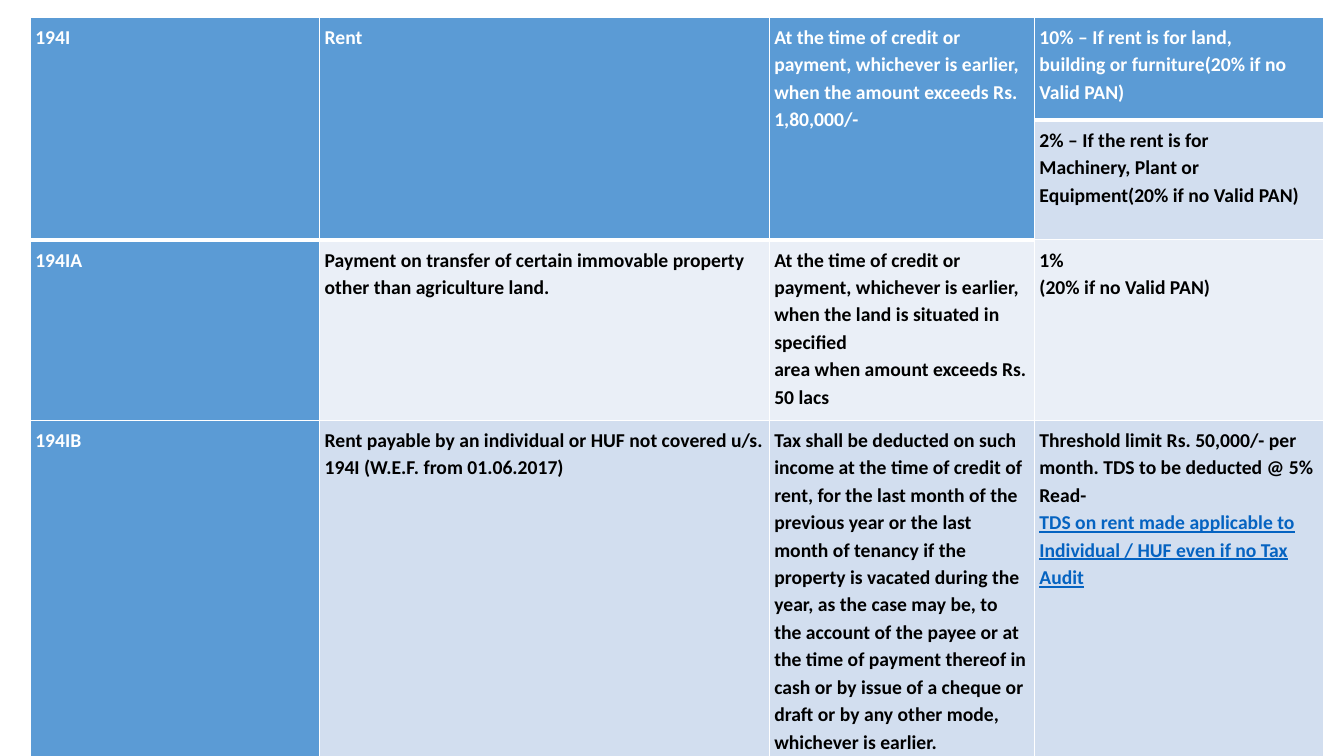
from lxml.etree import SubElement
from pptx import Presentation
from pptx.dml.color import RGBColor
from pptx.enum.text import PP_ALIGN
from pptx.oxml.ns import qn
from pptx.util import Inches, Pt

WHITE = RGBColor(0xFF, 0xFF, 0xFF)
BLACK = RGBColor(0x00, 0x00, 0x00)
BLUE = RGBColor(0x5B, 0x9B, 0xD5)
BAND_DARK = RGBColor(0xD2, 0xDE, 0xEF)
BAND_LIGHT = RGBColor(0xEA, 0xEF, 0xF7)
LINK_BLUE = RGBColor(0x05, 0x63, 0xC1)

COLUMN_WIDTHS = [2.87, 4.46, 2.63, 2.87]
ROW_HEIGHTS = [1.02, 1.18, 1.79, 3.31]
BAND_FILLS = [BLUE, BAND_DARK, BAND_LIGHT, BAND_DARK]
LINK_TEXT = "TDS on rent made applicable to Individual / HUF even if no Tax Audit"
JUSTIFIED = {"(20% if no Valid PAN)", "Read-"}

sections = [
    [
        ["194I"],
        ["Rent"],
        ["At the time of credit or payment, whichever is earlier, when the amount exceeds Rs. 1,80,000/-"],
        ["10% – If rent is for land,\nbuilding or furniture(20% if no Valid PAN)"],
    ],
    [
        [],
        [],
        [],
        ["2% – If the rent is for\nMachinery, Plant or\nEquipment(20% if no Valid PAN)"],
    ],
    [
        ["194IA"],
        ["Payment on transfer of certain immovable property other than agriculture land."],
        ["At the time of credit or payment, whichever is earlier, when the land is situated in specified\n"
         "area when amount exceeds Rs. 50 lacs"],
        ["1%", "(20% if no Valid PAN)"],
    ],
    [
        ["194IB"],
        ["Rent payable by an individual or HUF not covered u/s. 194I (W.E.F. from 01.06.2017)"],
        ["Tax shall be deducted on such income at the time of credit of rent, for the last month of the "
         "previous year or the last month of tenancy if the property is vacated during the year, as the "
         "case may be, to the account of the payee or at the time of payment thereof in cash or by issue "
         "of a cheque or draft or by any other mode, whichever is earlier."],
        ["Threshold limit Rs. 50,000/- per month. TDS to be deducted @ 5%", "Read-", LINK_TEXT],
    ],
]


def add_borders(cell, widths):
    properties = cell._tc.get_or_add_tcPr()
    for side, width in widths.items():
        line = SubElement(properties, qn(f"a:ln{side}"), w=str(Pt(width)))
        fill = SubElement(line, qn("a:solidFill"))
        SubElement(fill, qn("a:srgbClr"), val=str(WHITE))


def add_text(paragraph, text, color):
    paragraph.line_spacing = 1.15
    if text in JUSTIFIED:
        paragraph.alignment = PP_ALIGN.JUSTIFY
    for index, line in enumerate(text.split("\n")):
        if index:
            paragraph.add_line_break()
        run = paragraph.add_run()
        run.text = line
        run.font.name = "Calibri"
        run.font.size = Pt(14)
        run.font.bold = True
        run.font.color.rgb = color
        if text == LINK_TEXT:
            run.font.color.rgb = LINK_BLUE
            run.font.underline = True


prs = Presentation()
prs.slide_width = Inches(13.33)
prs.slide_height = Inches(7.5)
slide = prs.slides.add_slide(prs.slide_layouts[6])

tds_rates = slide.shapes.add_table(
    len(ROW_HEIGHTS), len(COLUMN_WIDTHS),
    Inches(0.3), Inches(0.17), Inches(sum(COLUMN_WIDTHS)), Inches(sum(ROW_HEIGHTS)),
).table
for column, width in zip(tds_rates.columns, COLUMN_WIDTHS):
    column.width = Inches(width)
for row, height in zip(tds_rates.rows, ROW_HEIGHTS):
    row.height = Inches(height)
for column_index in range(3):
    tds_rates.cell(0, column_index).merge(tds_rates.cell(1, column_index))

for row_index, section in enumerate(sections):
    for column_index, paragraphs in enumerate(section):
        cell = tds_rates.cell(row_index, column_index)
        header_end = 0 if column_index == 3 else 1
        is_blue = column_index == 0 or row_index <= header_end
        add_borders(cell, {
            "L": 1,
            "R": 1,
            "T": 3 if row_index == header_end + 1 else 1,
            "B": 3 if row_index <= header_end else 1,
        })
        cell.fill.solid()
        cell.fill.fore_color.rgb = BLUE if is_blue else BAND_FILLS[row_index]
        cell.margin_left = cell.margin_right = Inches(0.05)
        cell.margin_top = cell.margin_bottom = Inches(0.05)
        frame = cell.text_frame
        for index, text in enumerate(paragraphs):
            paragraph = frame.add_paragraph() if index else frame.paragraphs[0]
            add_text(paragraph, text, WHITE if is_blue else BLACK)

prs.save("out.pptx")
